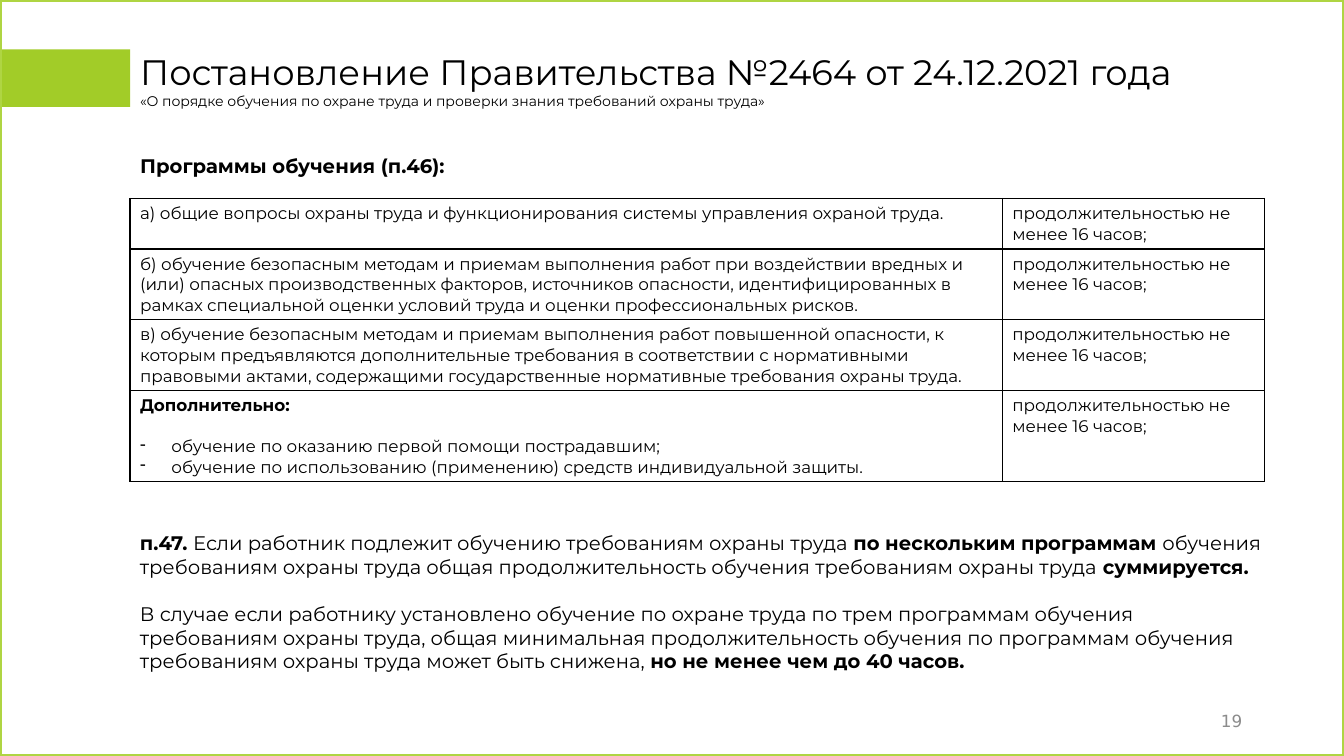
from lxml.etree import SubElement
from pptx import Presentation
from pptx.dml.color import RGBColor
from pptx.enum.shapes import MSO_SHAPE
from pptx.enum.text import MSO_ANCHOR, MSO_AUTO_SIZE, PP_ALIGN
from pptx.oxml.ns import qn
from pptx.util import Inches, Pt

WIDTH, HEIGHT = 13.33, 7.5
MARGIN = 1.29  # left edge shared by all content
FONT, BLACK = "Montserrat", "000000"

HOURS = "продолжительностью не менее 16 часов;"
PROGRAMS = [
    "а) общие вопросы охраны труда и функционирования системы управления охраной труда.",
    "б) обучение безопасным методам и приемам выполнения работ при воздействии вредных и "
    "(или) опасных производственных факторов, источников опасности, идентифицированных в "
    "рамках специальной оценки условий труда и оценки профессиональных рисков.",
    "в) обучение безопасным методам и приемам выполнения работ повышенной опасности, к "
    "которым предъявляются дополнительные требования в соответствии с нормативными "
    "правовыми актами, содержащими государственные нормативные требования охраны труда.",
]
EXTRA_TITLE = "Дополнительно:"
EXTRAS = [
    "обучение по оказанию первой помощи пострадавшим;",
    "обучение по использованию (применению) средств индивидуальной защиты.",
]
# Clause paragraphs as (text, bold) runs
CLAUSE = [
    [("п.47. ", True),
     ("Если работник подлежит обучению требованиям охраны труда ", False),
     ("по нескольким программам ", True),
     ("обучения требованиям охраны труда общая продолжительность обучения "
      "требованиям охраны труда ", False),
     ("суммируется.", True)],
    [("В случае если работнику установлено обучение по охране труда по трем программам "
      "обучения требованиям охраны труда, общая минимальная продолжительность обучения "
      "по программам обучения требованиям охраны труда может быть снижена, ", False),
     ("но не менее чем до 40 часов.", True)],
]


def rgb(color):
    return RGBColor.from_string(color)


def inches(*lengths):
    return [Inches(length) for length in lengths]


def style(paragraph, size, color=BLACK, bold=False, font=FONT, before=0):
    paragraph.space_before = Pt(before)
    paragraph.font.name = font
    paragraph.font.size = Pt(size)
    paragraph.font.bold = bold
    paragraph.font.color.rgb = rgb(color)


def set_bullet(paragraph, indent=0, char=None):
    props = paragraph._p.get_or_add_pPr()
    props.set("marL", str(Inches(indent)))
    props.set("indent", str(-Inches(indent)))
    if char:
        SubElement(props, qn("a:buChar"), char=char)
    else:
        SubElement(props, qn("a:buNone"))


def place(placeholder, box):
    placeholder.left, placeholder.top, placeholder.width, placeholder.height = inches(*box)
    placeholder.text_frame.auto_size = MSO_AUTO_SIZE.NONE


def add_text(slide, box):
    frame = slide.shapes.add_textbox(*inches(*box)).text_frame
    frame.word_wrap = True
    return frame


def add_rect(slide, box):
    rect = slide.shapes.add_shape(MSO_SHAPE.RECTANGLE, *inches(*box))
    rect.shadow.inherit = False
    return rect


def add_decor(slide, box):
    """Green tab beside the title and a thin frame around the box."""
    left, top, width, height = box
    tab = add_rect(slide, (left, top + 0.49, MARGIN, 0.57))
    tab.fill.solid()
    tab.fill.fore_color.rgb = rgb("A2CC28")
    tab.line.fill.background()
    border = add_rect(slide, box)
    border.fill.background()
    border.line.color.rgb = rgb("AFD543")
    border.line.width = Pt(2.25)


def add_header(slide, box):
    left, top, width, height = box
    title = slide.shapes.title
    place(title, (left, top, width, 0.57))
    title.text_frame.text = "Постановление Правительства №2464 от 24.12.2021 года"
    title.text_frame.vertical_anchor = MSO_ANCHOR.MIDDLE
    heading = title.text_frame.paragraphs[0]
    heading.alignment = PP_ALIGN.LEFT
    heading.line_spacing = 0.9
    style(heading, 25.2)

    subtitle = add_text(slide, (left, top + 0.42, 6.68, 0.27))
    subtitle.text = "«О порядке обучения по охране труда и проверки знания требований охраны труда»"
    style(subtitle.paragraphs[0], 10)

    section = slide.placeholders[1]
    place(section, (left, top + 1.03, 6.32, 0.44))
    section.text_frame.text = "Программы обучения (п.46):"
    set_bullet(section.text_frame.paragraphs[0])
    style(section.text_frame.paragraphs[0], 14, bold=True)


def outline(cell):
    props = cell._tc.get_or_add_tcPr()
    for side in ("lnL", "lnR", "lnT", "lnB"):
        edge = SubElement(props, qn(f"a:{side}"), w=str(Pt(1)))
        fill = SubElement(edge, qn("a:solidFill"))
        SubElement(fill, qn("a:srgbClr"), val=BLACK)
    cell.fill.background()


def add_programs(slide, box):
    row_heights = (0.5, 0.7, 0.7, 0.9)
    table = slide.shapes.add_table(len(row_heights), 2, *inches(*box)).table
    table.first_row = table.horz_banding = False
    hours_width = 2.6
    table.columns[0].width = Inches(box[2] - hours_width)
    table.columns[1].width = Inches(hours_width)

    for row, height, text in zip(table.rows, row_heights, PROGRAMS + [EXTRA_TITLE]):
        row.height = Inches(height)
        for cell, content in zip(row.cells, (text, HOURS)):
            cell.text = content
            style(cell.text_frame.paragraphs[0], 12, bold=content == EXTRA_TITLE)
            outline(cell)

    # Extra programs listed under their heading in the last row
    extra_frame = table.cell(len(row_heights) - 1, 0).text_frame
    for number, text in enumerate(EXTRAS):
        item = extra_frame.add_paragraph()
        item.text = text
        set_bullet(item, 0.31, "-")
        style(item, 12, before=0 if number else 14.6)


def add_clause(slide, box):
    frame = add_text(slide, box)
    for number, runs in enumerate(CLAUSE):
        paragraph = frame.add_paragraph() if number else frame.paragraphs[0]
        style(paragraph, 14, before=17 if number else 0)
        for text, bold in runs:
            run = paragraph.add_run()
            run.text = text
            run.font.bold = bold


def add_page_number(slide, box):
    frame = add_text(slide, box)
    frame.text = "19"
    frame.vertical_anchor = MSO_ANCHOR.MIDDLE
    frame.paragraphs[0].alignment = PP_ALIGN.RIGHT
    style(frame.paragraphs[0], 12, "8C8C8C", font="DejaVu Sans")


def main():
    deck = Presentation()
    deck.slide_width, deck.slide_height = inches(WIDTH, HEIGHT)
    slide = deck.slides.add_slide(deck.slide_layouts[1])
    add_decor(slide, (0, 0, WIDTH, HEIGHT))
    add_header(slide, (MARGIN, 0.45, 11.62, 1.47))
    add_programs(slide, (MARGIN, 1.97, 11.25, 2.8))
    add_clause(slide, (MARGIN, 5.22, 11.43, 1.51))
    add_page_number(slide, (9.42, 6.95, 3, 0.4))
    deck.save("out.pptx")


if __name__ == "__main__":
    main()
